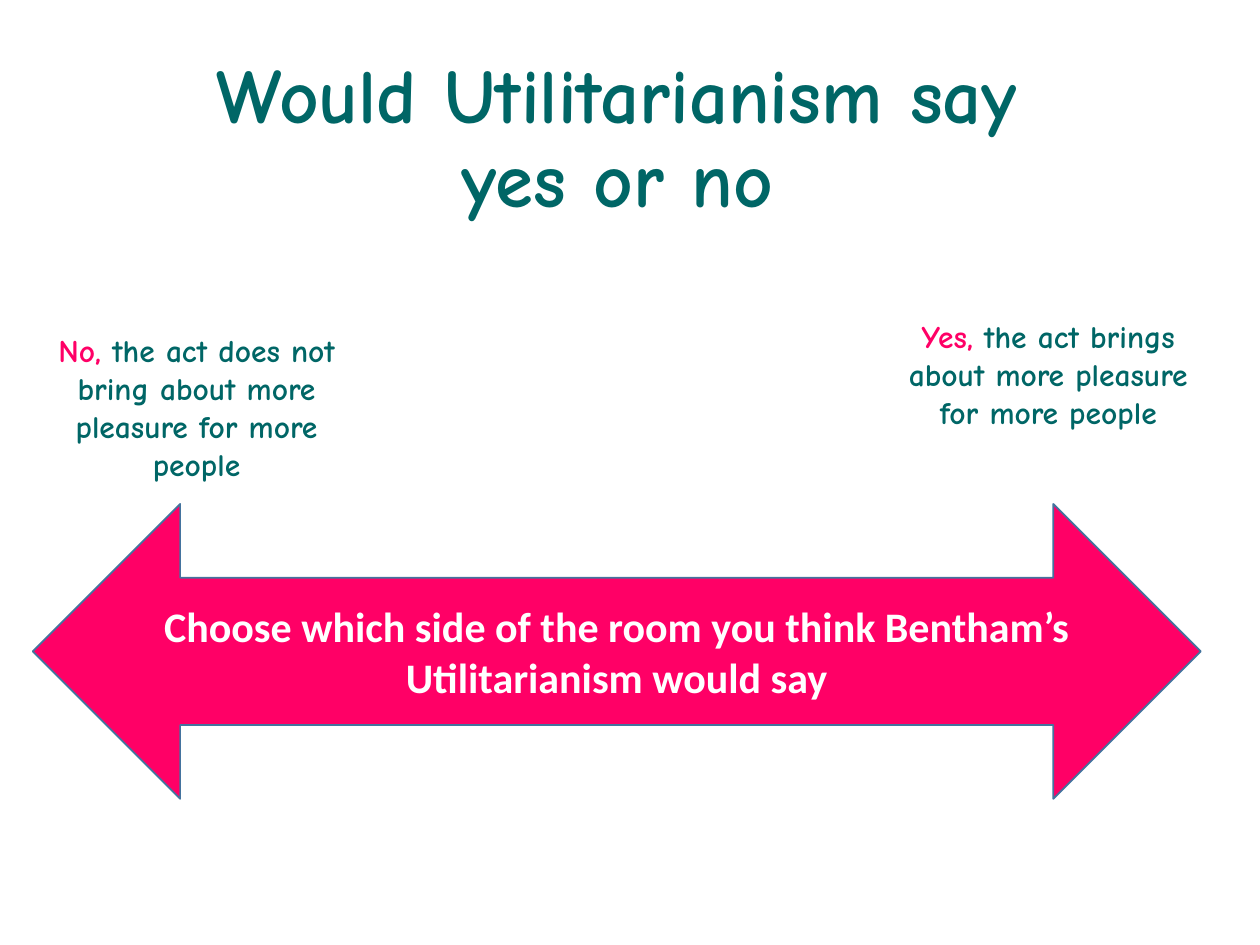
from lxml import etree
from pptx import Presentation
from pptx.dml.color import RGBColor
from pptx.enum.shapes import MSO_SHAPE
from pptx.enum.text import MSO_ANCHOR, PP_ALIGN
from pptx.oxml.ns import qn
from pptx.util import Inches, Pt

RECT, ARROW = MSO_SHAPE.RECTANGLE, MSO_SHAPE.LEFT_RIGHT_ARROW
TOP, MIDDLE = MSO_ANCHOR.TOP, MSO_ANCHOR.MIDDLE
CENTER = PP_ALIGN.CENTER

WHITE = RGBColor(0xFF, 0xFF, 0xFF)
TEAL = RGBColor(0x00, 0x66, 0x66)
PINK = RGBColor(0xFF, 0x00, 0x66)
BLUE = RGBColor(0x43, 0x73, 0x9E)

COLS, ROWS = 100, 75
UNIT = Inches(0.1)
LEFT = 2.6
ANSWER_W, ANSWER_H = 26, 13.1
PANEL_ALPHA = 83000

TITLE_FONT = {"name": "Comic Neue", "size": Pt(44), "bold": True}
ANSWER_FONT = {"name": "Comic Neue", "size": Pt(18), "bold": True}
ARROW_FONT = {"name": "Calibri", "size": Pt(24), "bold": True}

TITLE = [("Would Utilitarianism say yes or no", TEAL)]
TASK = [("Choose which side of the room you think Bentham’s "
         "Utilitarianism would say", WHITE)]
ANSWERS = [
    (70.2, 24.7, "Yes, ", "the act brings about more pleasure for more people"),
    (LEFT, 25.8, "No, ", "the act does not bring about more pleasure for more people"),
]


def add_block(slide, kind, box, runs, font, fill, anchor, spacing=None):
    s = slide.shapes.add_shape(kind, *(round(v * UNIT) for v in box))
    s.shadow.inherit = False
    s.fill.solid()
    s.fill.fore_color.rgb = fill
    s.line.fill.background()
    tf = s.text_frame
    tf.word_wrap = True
    tf.vertical_anchor = anchor
    p = tf.paragraphs[0]
    p.alignment = CENTER
    p.line_spacing = spacing
    for text, color in runs:
        r = p.add_run()
        r.text = text
        for key, value in font.items():
            setattr(r.font, key, value)
        r.font.color.rgb = color
    return s


def add_panel(slide, *args):
    s = add_block(slide, RECT, *args)
    color = s.fill._xPr.find(qn("a:solidFill"))[0]
    etree.SubElement(color, qn("a:alpha"), val=str(PANEL_ALPHA))


def main():
    prs = Presentation()
    prs.slide_width, prs.slide_height = COLS * UNIT, ROWS * UNIT
    slide = prs.slides.add_slide(prs.slide_layouts[6])

    add_panel(slide, (11.9, 3.9, 74.2, 14.5), TITLE, TITLE_FONT, WHITE, MIDDLE, 0.9)

    s = add_block(slide, ARROW, (LEFT, 40, 92.7, 23.4), TASK, ARROW_FONT, PINK, MIDDLE)
    s.line.color.rgb = BLUE
    s.line.width = Pt(1)

    for x, y, verdict, reason in ANSWERS:
        add_panel(slide, (x, y, ANSWER_W, ANSWER_H),
                  [(verdict, PINK), (reason, TEAL)], ANSWER_FONT, WHITE, TOP)

    prs.save("out.pptx")


if __name__ == "__main__":
    main()
